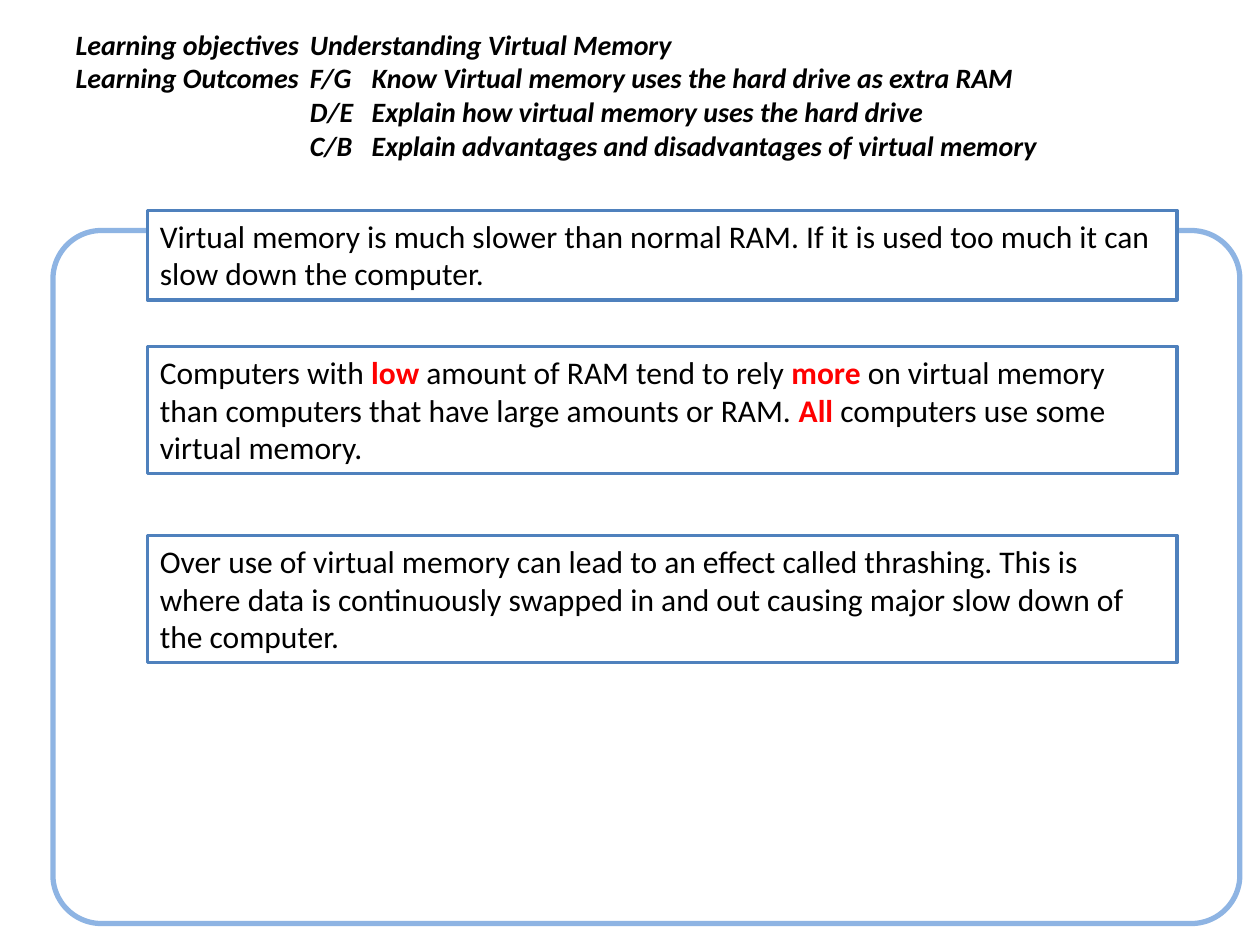
"""Build the slide on the drawbacks of virtual memory."""
from dataclasses import dataclass

from lxml.etree import SubElement
from pptx import Presentation
from pptx.dml.color import RGBColor
from pptx.enum.shapes import MSO_SHAPE
from pptx.enum.text import MSO_ANCHOR, MSO_AUTO_SIZE, PP_ALIGN
from pptx.oxml.ns import qn
from pptx.util import Inches, Pt

COLOURS = {
    "text": "000000",
    "key": "FF0000",
    "fill": "FFFFFF",
    "box": "4F81BD",
    "frame": "8EB4E3",
}
TITLE_FORMAT = {"name": "Calibri", "size": Pt(16), "bold": True, "italic": True}
BODY_FORMAT = {"name": "Calibri", "size": Pt(18), "bold": False}
KEY_FORMAT = BODY_FORMAT | {"bold": True}
TITLE_TABS = (1.86, 2.35)
TITLE_LINES = (
    "Learning objectives\tUnderstanding Virtual Memory",
    "Learning Outcomes\tF/G\tKnow Virtual memory uses the hard drive as extra RAM",
    "\tD/E\tExplain how virtual memory uses the hard drive",
    "\tC/B\tExplain advantages and disadvantages of virtual memory",
)


@dataclass
class Note:
    """A boxed statement whose odd-numbered phrases are key words."""

    top: float
    height: float
    phrases: tuple[str, ...]


NOTES = (
    Note(1.67, 0.71, (
        "Virtual memory is much slower than normal RAM. "
        "If it is used too much it can slow down the computer.",
    )),
    Note(2.75, 1.01, (
        "Computers with ",
        "low",
        " amount of RAM tend to rely ",
        "more",
        " on virtual memory than computers that have large amounts or RAM. ",
        "All ",
        "computers use some virtual memory.",
    )),
    Note(4.25, 1.01, (
        "Over use of virtual memory can lead to an effect called thrashing. "
        "This is where data is continuously swapped in and out "
        "causing major slow down of the computer.",
    )),
)


def colour(name: str) -> RGBColor:
    """Return a named colour."""
    return RGBColor.from_string(COLOURS[name])


def add_run(paragraph, text: str, formats: dict, colour_name: str = "text") -> None:
    """Add a formatted run to a paragraph."""
    run = paragraph.add_run()
    run.text = text
    for name, value in formats.items():
        setattr(run.font, name, value)
    run.font.color.rgb = colour(colour_name)


def paint(shape, line_name: str, width: float) -> None:
    """Give a shape a white fill and a coloured outline."""
    shape.fill.solid()
    shape.fill.fore_color.rgb = colour("fill")
    shape.line.color.rgb = colour(line_name)
    shape.line.width = Pt(width)


def add_frame(slide) -> None:
    """Draw the rounded frame around the content."""
    shape = slide.shapes.add_shape(
        MSO_SHAPE.ROUNDED_RECTANGLE, Inches(0.42), Inches(1.83), Inches(9.42), Inches(5.5)
    )
    shape.adjustments[0] = 0.07
    shape.shadow.inherit = False
    paint(shape, "frame", 3)


def fill_title(title) -> None:
    """Place the title and write its lines on shared tab stops."""
    title.left, title.top = Inches(0.5), Inches(0)
    title.width, title.height = Inches(9.33), Inches(1.5)
    frame = title.text_frame
    frame.word_wrap = True
    frame.auto_size = MSO_AUTO_SIZE.NONE
    frame.vertical_anchor = MSO_ANCHOR.MIDDLE
    for index, line in enumerate(TITLE_LINES):
        paragraph = frame.add_paragraph() if index else frame.paragraphs[0]
        paragraph.alignment = PP_ALIGN.LEFT
        paragraph.space_before = Pt(0)
        tabs = SubElement(paragraph._p.get_or_add_pPr(), qn("a:tabLst"))
        for position in TITLE_TABS:
            SubElement(tabs, qn("a:tab"), pos=str(Inches(position)), algn="l")
        add_run(paragraph, line, TITLE_FORMAT)


def add_note(slide, note: Note) -> None:
    """Draw one boxed statement."""
    shape = slide.shapes.add_textbox(
        Inches(1.17), Inches(note.top), Inches(8.17), Inches(note.height)
    )
    paint(shape, "box", 2)
    frame = shape.text_frame
    frame.word_wrap = True
    frame.auto_size = MSO_AUTO_SIZE.SHAPE_TO_FIT_TEXT
    for index, phrase in enumerate(note.phrases):
        is_key = index % 2 == 1
        add_run(
            frame.paragraphs[0],
            phrase,
            KEY_FORMAT if is_key else BODY_FORMAT,
            "key" if is_key else "text",
        )


def main() -> None:
    """Create and save the presentation."""
    presentation = Presentation()
    presentation.slide_width, presentation.slide_height = Inches(10), Inches(7.5)
    slide = presentation.slides.add_slide(presentation.slide_layouts[5])
    fill_title(slide.shapes.title)
    add_frame(slide)
    for note in NOTES:
        add_note(slide, note)
    presentation.save("out.pptx")


if __name__ == "__main__":
    main()
